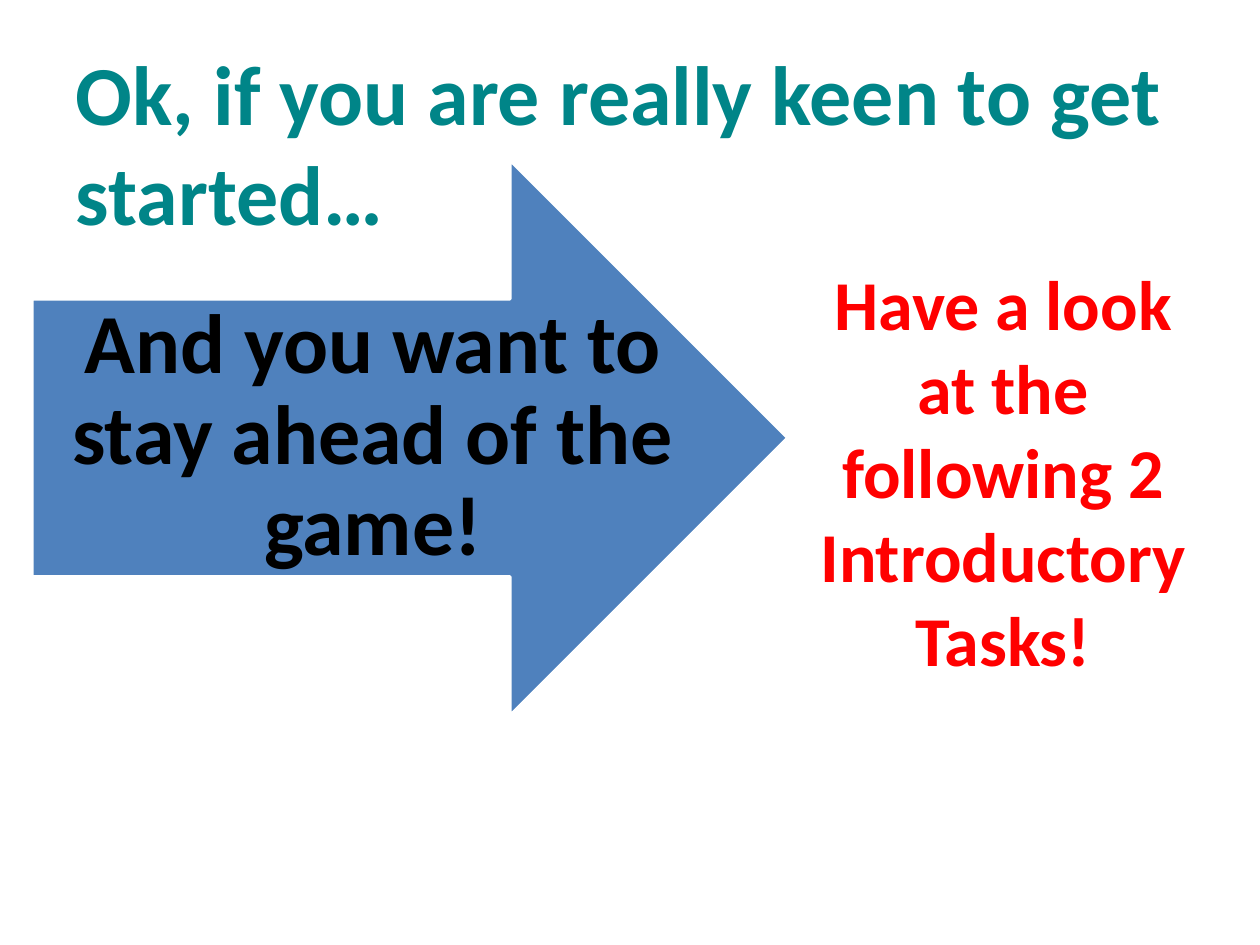
from dataclasses import dataclass

import pptx
import pptx.dml.color
import pptx.enum.shapes
import pptx.enum.text
import pptx.shapes.autoshape
import pptx.util

PX_PER_INCH = 126
ALIGN = pptx.enum.text.PP_ALIGN
ANCHOR = pptx.enum.text.MSO_ANCHOR


@dataclass
class Box:
    left: int
    top: int
    width: int
    height: int


@dataclass
class Label:
    text: str
    size: int
    color: str
    align: ALIGN
    anchor: ANCHOR
    spacing: float = 1.0
    margins: tuple[int, int, int, int] = (13, 6, 13, 6)


def px(n: int) -> int:
    return round(n * pptx.util.Inches(1) / PX_PER_INCH)


def rgb(color: str) -> pptx.dml.color.RGBColor:
    return pptx.dml.color.RGBColor.from_string(color)


def place(box: Box) -> tuple[int, int, int, int]:
    return px(box.left), px(box.top), px(box.width), px(box.height)


def write(sp: pptx.shapes.autoshape.Shape, label: Label) -> None:
    tf = sp.text_frame
    tf.text = label.text
    tf.word_wrap = True
    tf.auto_size = pptx.enum.text.MSO_AUTO_SIZE.NONE
    tf.vertical_anchor = label.anchor
    tf.margin_left, tf.margin_top, tf.margin_right, tf.margin_bottom = map(px, label.margins)
    p = tf.paragraphs[0]
    p.alignment = label.align
    p.line_spacing = label.spacing
    font = p.runs[0].font
    font.name = "Calibri"
    font.size = pptx.util.Pt(label.size)
    font.bold = True
    font.color.rgb = rgb(label.color)


def add_arrow(s: pptx.slide.Slide, box: Box, fill: str, line: str) -> None:
    sp = s.shapes.add_shape(pptx.enum.shapes.MSO_SHAPE.RIGHT_ARROW, *place(box))
    sp.shadow.inherit = False
    sp.fill.solid()
    sp.fill.fore_color.rgb = rgb(fill)
    sp.line.color.rgb = rgb(line)
    sp.line.width = pptx.util.Pt(2)


def main() -> None:
    prs = pptx.Presentation()
    prs.slide_width, prs.slide_height = px(1260), px(945)
    s = prs.slides.add_slide(prs.slide_layouts.get_by_name("Title Only"))

    title = s.shapes.title
    title.left, title.top, title.width, title.height = place(Box(63, 63, 1134, 158))
    write(title, Label("Ok, if you are really keen to get started…", 48, "008588",
                       ALIGN.LEFT, ANCHOR.MIDDLE))

    add_arrow(s, Box(32, 160, 756, 556), "4F81BD", "FFFFFF")

    labels = [
        (Box(63, 299, 620, 277),
         Label("And you want to stay ahead of the game!", 48, "000000",
               ALIGN.CENTER, ANCHOR.MIDDLE, 0.9, (0, 0, 0, 0))),
        (Box(798, 255, 410, 437),
         Label("Have a look at the following 2 Introductory Tasks!", 40, "FF0000",
               ALIGN.CENTER, ANCHOR.TOP)),
    ]
    for box, label in labels:
        write(s.shapes.add_textbox(*place(box)), label)

    prs.save("out.pptx")


if __name__ == "__main__":
    main()
